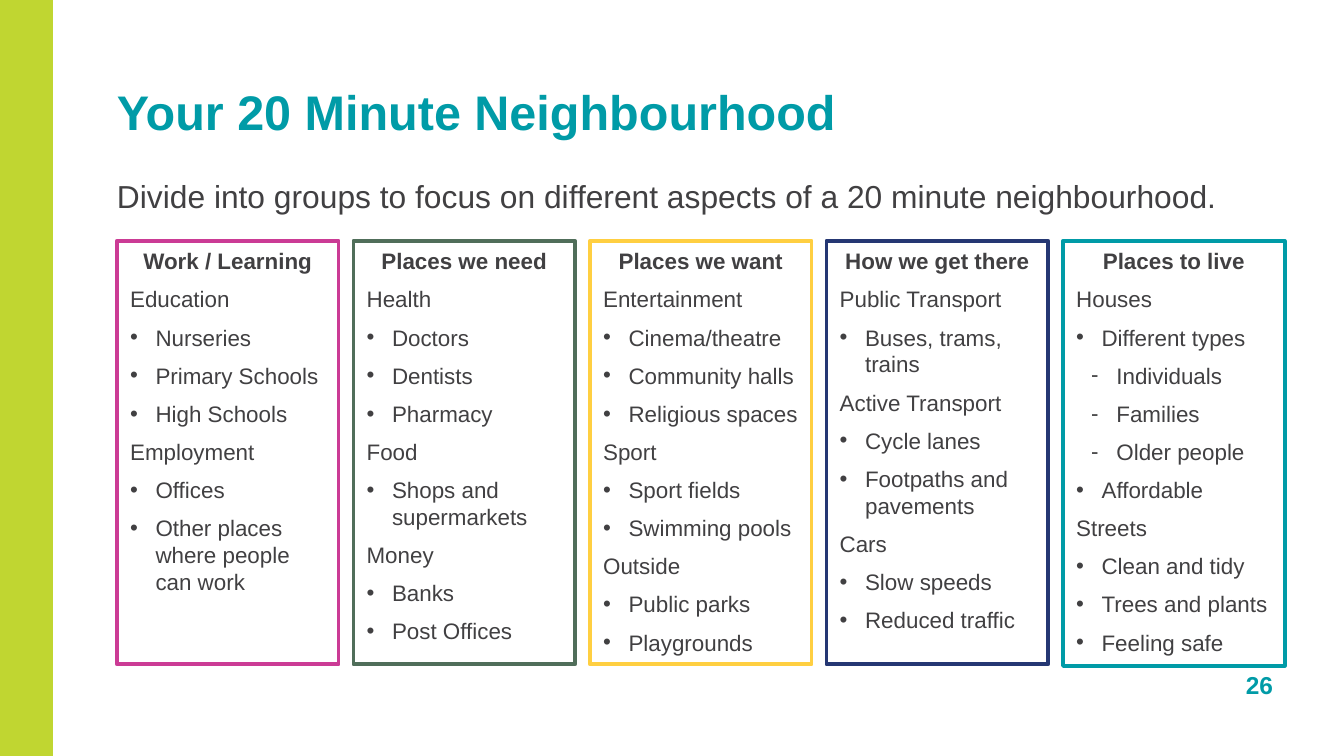
from lxml import etree
from pptx import Presentation
from pptx.dml.color import RGBColor
from pptx.enum import shapes, text
from pptx.oxml.ns import qn
from pptx.util import Cm, Pt

LIME = RGBColor(0xC0, 0xD6, 0x31)
TEAL = RGBColor(0x00, 0x9B, 0xA7)
GREY = RGBColor(0x41, 0x40, 0x42)
WHITE = RGBColor(0xFF, 0xFF, 0xFF)
PINK = RGBColor(0xCB, 0x3B, 0x95)
GREEN = RGBColor(0x50, 0x6E, 0x5A)
GOLD = RGBColor(0xFF, 0xCF, 0x41)
NAVY = RGBColor(0x25, 0x37, 0x73)

# Each theme: heading, border colour, box height, then (topic, items).
# An item that is a list holds the dashed points below the item before it.
THEMES = [
    ("Work / Learning", PINK, 8, [
        ("Education", ["Nurseries", "Primary Schools", "High Schools"]),
        ("Employment", ["Offices", "Other places where people can work"]),
    ]),
    ("Places we need", GREEN, 8, [
        ("Health", ["Doctors", "Dentists", "Pharmacy"]),
        ("Food", ["Shops and supermarkets"]),
        ("Money", ["Banks", "Post Offices"]),
    ]),
    ("Places we want", GOLD, 8, [
        ("Entertainment",
         ["Cinema/theatre", "Community halls", "Religious spaces"]),
        ("Sport", ["Sport fields", "Swimming pools"]),
        ("Outside", ["Public parks", "Playgrounds"]),
    ]),
    ("How we get there", NAVY, 8, [
        ("Public Transport", ["Buses, trams, trains"]),
        ("Active Transport", ["Cycle lanes", "Footpaths and pavements"]),
        ("Cars", ["Slow speeds", "Reduced traffic"]),
    ]),
    ("Places to live", TEAL, 8.03, [
        ("Houses", ["Different types",
                    ["Individuals", "Families", "Older people"],
                    "Affordable"]),
        ("Streets", ["Clean and tidy", "Trees and plants", "Feeling safe"]),
    ]),
]


def style(para, size, colour, bold=False):
    for run in para.runs:
        font = run.font
        font.name = "Arial"
        font.size = Pt(size)
        font.bold = bold
        font.color.rgb = colour


def add_rect(slide, left, top, width, height, fill):
    rect = slide.shapes.add_shape(
        shapes.MSO_SHAPE.RECTANGLE, Cm(left), Cm(top), Cm(width), Cm(height))
    rect.shadow.inherit = False
    rect.fill.solid()
    rect.fill.fore_color.rgb = fill
    rect.line.fill.background()
    return rect


def add_text(slide, left, top, width, height, words, size, colour, bold=False):
    box = slide.shapes.add_textbox(Cm(left), Cm(top), Cm(width), Cm(height))
    frame = box.text_frame
    frame.word_wrap = True
    frame.margin_left = frame.margin_right = 0
    frame.margin_top = frame.margin_bottom = 0
    frame.text = words
    style(frame.paragraphs[0], size, colour, bold)
    return frame


def set_mark(para, mark, indent):
    props = para._p.get_or_add_pPr()
    props.set("marL", str(Cm(indent)))
    props.set("indent", str(-Cm(0.48)))
    etree.SubElement(props, qn("a:buFont")).set("typeface", "Arial")
    etree.SubElement(props, qn("a:buChar")).set("char", mark)


def add_line(frame, words, mark=None, level=0):
    para = frame.add_paragraph()
    para.text = words
    para.alignment = text.PP_ALIGN.LEFT
    para.space_after = Pt(6)
    para.level = level
    if mark:
        set_mark(para, mark, 0.48 + 0.28 * level)
    style(para, 12, GREY)


def add_theme(slide, left, head, colour, height, topics):
    box = add_rect(slide, left, 4.55, 4.19, height, WHITE)
    box.line.color.rgb = colour
    box.line.width = Pt(2)
    frame = box.text_frame
    frame.word_wrap = True
    frame.auto_size = text.MSO_AUTO_SIZE.SHAPE_TO_FIT_TEXT
    frame.vertical_anchor = text.MSO_ANCHOR.TOP

    # Heading
    frame.text = head
    first = frame.paragraphs[0]
    first.alignment = text.PP_ALIGN.CENTER
    first.space_after = Pt(6)
    style(first, 12, GREY, True)

    # Topics with their points
    for topic, items in topics:
        add_line(frame, topic)
        for item in items:
            if isinstance(item, list):
                for point in item:
                    add_line(frame, point, "-", 1)
            else:
                add_line(frame, item, "•")


def main():
    deck = Presentation()
    deck.slide_width = Cm(25.4)
    deck.slide_height = Cm(14.28)
    slide = deck.slides.add_slide(deck.slide_layouts[6])

    # Side band
    add_rect(slide, 0, 0, 1, 14.28, LIME)

    # Title and task
    title = add_text(slide, 2.21, 1.55, 15.6, 1.09,
                     "Your 20 Minute Neighbourhood", 26, TEAL, True)
    title.vertical_anchor = text.MSO_ANCHOR.BOTTOM
    add_text(slide, 2.21, 3.33, 21.67, 1.1,
             "Divide into groups to focus on different aspects of "
             "a 20 minute neighbourhood.", 17, GREY)

    # Theme boxes
    for col, theme in enumerate(THEMES):
        add_theme(slide, 2.21 + 4.47 * col, *theme)

    # Page number
    page = add_text(slide, 22.3, 12.52, 1.76, 0.69, "26", 13.1, TEAL, True)
    page.vertical_anchor = text.MSO_ANCHOR.BOTTOM
    page.paragraphs[0].alignment = text.PP_ALIGN.RIGHT

    deck.save("out.pptx")


if __name__ == "__main__":
    main()
